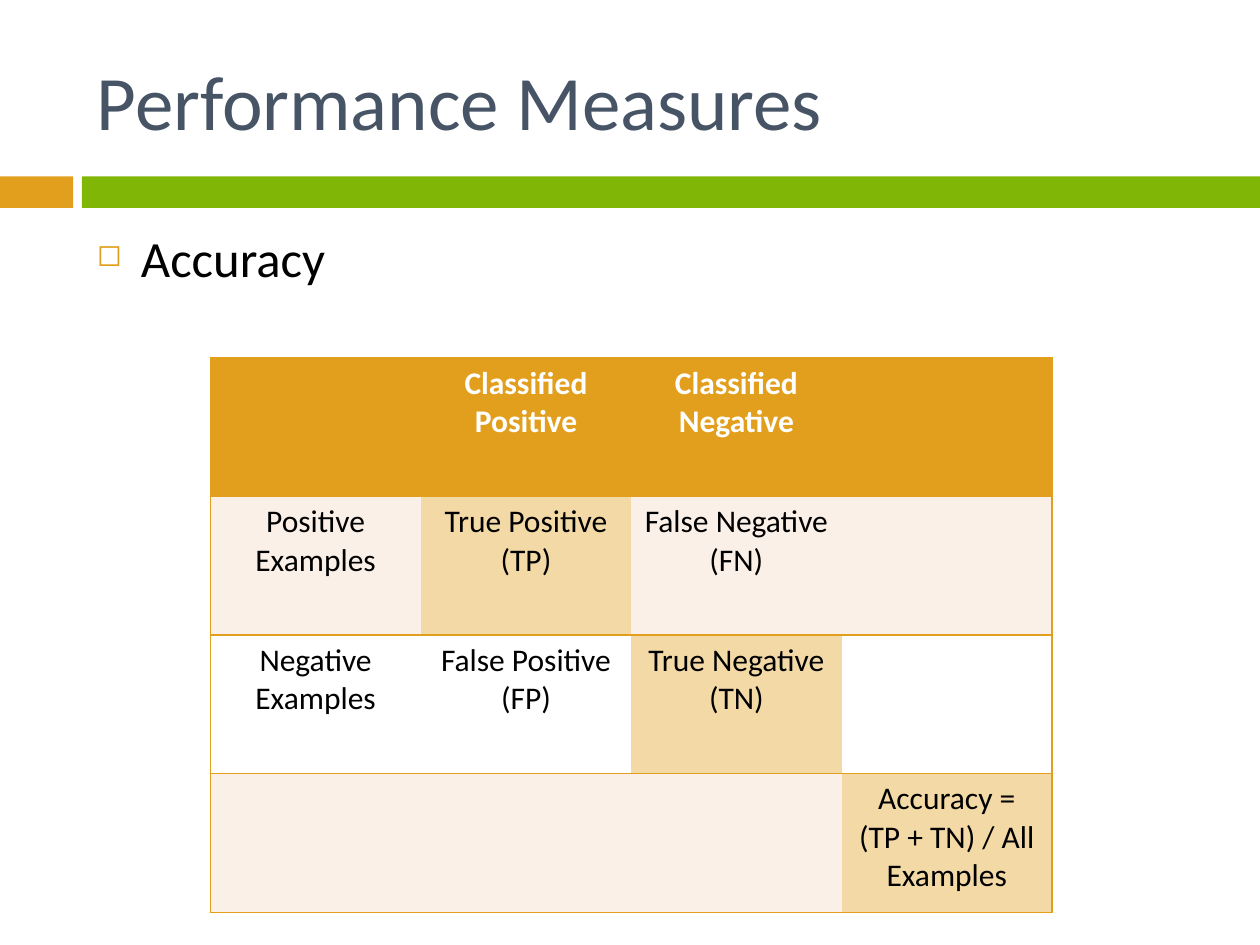
from dataclasses import dataclass

from lxml import etree
from pptx import Presentation
from pptx import util as u
from pptx.dml.color import RGBColor
from pptx.enum import shapes, text
from pptx.oxml import ns

PX = 9144  # EMU in one px, at 100 px to the inch


@dataclass(frozen=True)
class Theme:
    font: str = "Calibri"
    title_size: int = 44
    body_size: int = 29
    cell_size: int = 18
    slate: str = "465466"
    black: str = "000000"
    white: str = "FFFFFF"
    orange: str = "E29F1D"
    green: str = "80B606"
    band: str = "FAF0E8"
    highlight: str = "F3D9A5"


def color_xml(parent, tag, color):
    """Add a colour-holding element such as a:solidFill or a:buClr."""
    holder = etree.SubElement(parent, ns.qn(tag))
    etree.SubElement(holder, ns.qn("a:srgbClr"), val=color)


class SlideBuilder:
    def __init__(self, slide, theme):
        self.slide = slide
        self.theme = theme

    def set_font(self, para, size, color, bold=False):
        para.font.name = self.theme.font
        para.font.size = u.Pt(size)
        para.font.bold = bold
        para.font.color.rgb = RGBColor.from_string(color)

    def bar(self, left, top, width, height, color):
        box = self.slide.shapes.add_shape(
            shapes.MSO_SHAPE.RECTANGLE, left * PX, top * PX, width * PX, height * PX)
        box.shadow.inherit = False
        box.fill.solid()
        box.fill.fore_color.rgb = RGBColor.from_string(color)
        box.line.fill.background()

    def text_box(self, left, top, width, height, words, size, color,
                 anchor=text.MSO_ANCHOR.TOP):
        box = self.slide.shapes.add_textbox(left * PX, top * PX, width * PX, height * PX)
        frame = box.text_frame
        frame.word_wrap = True
        frame.vertical_anchor = anchor
        para = frame.paragraphs[0]
        para.text = words
        self.set_font(para, size, color)
        return para

    def bullet(self, para, indent):
        para.space_before = u.Pt(7)
        props = para._p.get_or_add_pPr()
        props.set("marL", str(indent * PX))
        props.set("indent", str(-indent * PX))
        color_xml(props, "a:buClr", self.theme.orange)
        etree.SubElement(props, ns.qn("a:buSzPct"), val="60000")
        etree.SubElement(props, ns.qn("a:buChar"), char="◻")

    def borders(self, cell, sides):
        """Draw the named sides (of L, R, T, B) and clear the others."""
        props = cell._tc.get_or_add_tcPr()
        for place, side in enumerate("LRTB"):
            line = etree.Element(ns.qn(f"a:ln{side}"), w=str(u.Pt(1)))
            if side in sides:
                color_xml(line, "a:solidFill", self.theme.orange)
            else:
                etree.SubElement(line, ns.qn("a:noFill"))
            props.insert(place, line)

    def table(self, left, top, column_width, row_height, rows, highlights):
        theme = self.theme
        row_count, column_count = len(rows), len(rows[0])
        table = self.slide.shapes.add_table(
            row_count, column_count, left * PX, top * PX,
            column_count * column_width * PX, row_count * row_height * PX).table
        for row, labels in enumerate(rows):
            header = row == 0
            row_fill = theme.orange if header else (theme.white, theme.band)[row % 2]
            for column, label in enumerate(labels):
                cell = table.cell(row, column)
                fill = theme.highlight if (row, column) in highlights else row_fill
                cell.fill.solid()
                cell.fill.fore_color.rgb = RGBColor.from_string(fill)
                outer = {0: "L", column_count - 1: "R"}.get(column, "")
                self.borders(cell, "TB" + outer)
                para = cell.text_frame.paragraphs[0]
                para.text = label
                para.alignment = text.PP_ALIGN.CENTER
                self.set_font(para, theme.cell_size,
                              theme.white if header else theme.black, header)


def main():
    theme = Theme()
    deck = Presentation()
    deck.slide_width, deck.slide_height = 1000 * PX, 750 * PX
    page = SlideBuilder(deck.slides.add_slide(deck.slide_layouts[6]), theme)

    page.bar(0, 140, 58, 25, theme.orange)
    page.bar(65, 140, 935, 25, theme.green)
    page.text_box(67, 25, 892, 108, "Performance Measures", theme.title_size,
                  theme.slate, text.MSO_ANCHOR.MIDDLE)
    topic = page.text_box(67, 175, 892, 492, "Accuracy", theme.body_size, theme.black)
    page.bullet(topic, 35)

    confusion_matrix = [
        ["", "Classified Positive", "Classified Negative", ""],
        ["Positive Examples", "True Positive (TP)", "False Negative (FN)", ""],
        ["Negative Examples", "False Positive (FP)", "True Negative (TN)", ""],
        ["", "", "", "Accuracy = (TP + TN) / All Examples"],
    ]
    diagonal = {(step, step) for step in range(1, len(confusion_matrix))}
    page.table(167, 284, 167, 110, confusion_matrix, diagonal)

    deck.save("out.pptx")


if __name__ == "__main__":
    main()
